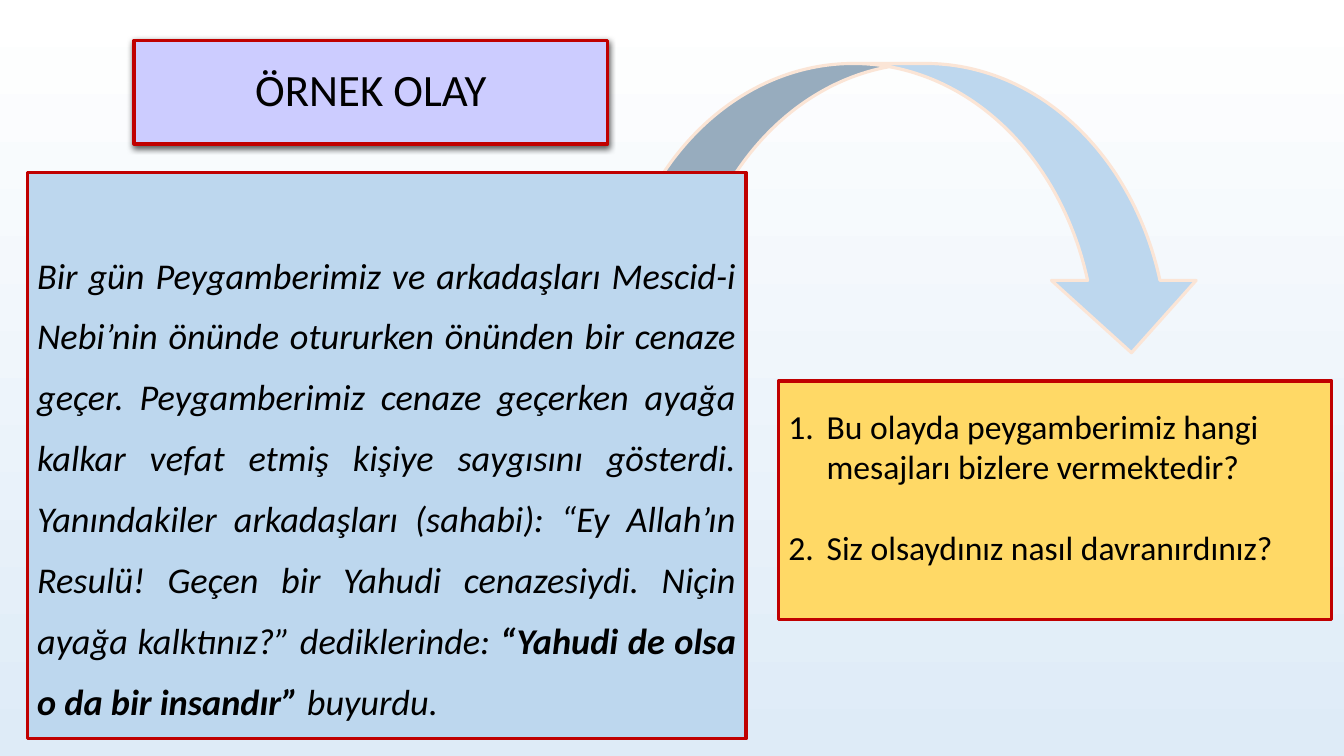
import pptx
import pptx.util
import pptx.dml.color
import pptx.enum.shapes
import pptx.enum.text
import pptx.oxml
import pptx.oxml.ns

Inches, Pt = pptx.util.Inches, pptx.util.Pt
SHAPE = pptx.enum.shapes.MSO_SHAPE
ALIGN = pptx.enum.text.PP_ALIGN
ANCHOR = pptx.enum.text.MSO_ANCHOR

FONT = "Calibri"
COLORS = {
    "text": "000000", "border": "C00000", "title": "CCCCFF", "story": "BDD7EE",
    "questions": "FFD966", "arrow_line": "FBE5D6", "sky_top": "FFFFFF", "sky_bottom": "DEEBF7",
}
TITLE = "ÖRNEK OLAY"
STORY = [  # text, bold
    ("Bir gün Peygamberimiz ve arkadaşları Mescid-i Nebi’nin önünde otururken önünden bir "
     "cenaze geçer. Peygamberimiz cenaze geçerken ayağa kalkar vefat etmiş kişiye saygısını "
     "gösterdi. Yanındakiler arkadaşları (sahabi): “Ey Allah’ın Resulü! Geçen bir Yahudi "
     "cenazesiydi. Niçin ayağa kalktınız?” dediklerinde: ", False),
    ("“Yahudi de olsa o da bir insandır” ", True),
    ("buyurdu.", False),
]
QUESTIONS = [
    "Bu olayda peygamberimiz hangi mesajları bizlere vermektedir?",
    "Siz olsaydınız nasıl davranırdınız?",
]
PLACES = {  # left, top, width, height
    "title": (1.33, 0.4, 4.7, 1.03),
    "questions": (7.72, 3.78, 5.49, 2.37),
    "arrow": (6.06, 0.63, 5.88, 2.87),
    "story": (0.27, 1.71, 7.13, 5.62),
}
NUMBER_INDENT = Inches(0.38)
SHADOW = (
    f'<a:effectLst {pptx.oxml.ns.nsdecls("a")}>'
    '<a:outerShdw blurRad="57150" dist="19050" dir="5400000" algn="ctr" rotWithShape="0">'
    '<a:srgbClr val="000000"><a:alpha val="63000"/></a:srgbClr></a:outerShdw></a:effectLst>'
)


def color(name):
    return pptx.dml.color.RGBColor.from_string(COLORS[name])


def add_panel(slide, place, fill, line="border", kind=SHAPE.RECTANGLE):
    panel = slide.shapes.add_shape(kind, *map(Inches, PLACES[place]))
    panel.shadow.inherit = False
    panel.fill.solid()
    panel.fill.fore_color.rgb = color(fill)
    panel.line.color.rgb = color(line)
    panel.line.width = Pt(2.25)
    return panel


def set_frame(panel, anchor, bottom=0.05):
    frame = panel.text_frame
    frame.word_wrap = True
    frame.vertical_anchor = anchor
    frame.margin_bottom = Inches(bottom)
    return frame


def add_span(para, text, size, bold=False, italic=False):
    span = para.add_run()
    span.text = text
    span.font.name = FONT
    span.font.size = Pt(size)
    span.font.bold = bold
    span.font.italic = italic
    span.font.color.rgb = color("text")


def number_paragraph(para):
    properties = para._p.get_or_add_pPr()
    properties.set("marL", str(NUMBER_INDENT))
    properties.set("indent", str(-NUMBER_INDENT))
    properties.append(pptx.oxml.parse_xml(
        f'<a:buAutoNum {pptx.oxml.ns.nsdecls("a")} type="arabicPeriod"/>'))


def paint_background(slide):
    fill = slide.background.fill
    fill.gradient()
    fill.gradient_angle = 270
    for stop, name in zip(fill.gradient_stops, ("sky_top", "sky_bottom")):
        stop.color.rgb = color(name)


def add_title(slide):
    panel = add_panel(slide, "title", "title")
    properties = panel._element.spPr
    properties.replace(properties.find(pptx.oxml.ns.qn("a:effectLst")),
                       pptx.oxml.parse_xml(SHADOW))
    para = set_frame(panel, ANCHOR.MIDDLE).paragraphs[0]
    para.alignment = ALIGN.CENTER
    para.line_spacing = 0.9
    add_span(para, TITLE, 32)


def add_questions(slide):
    frame = set_frame(add_panel(slide, "questions", "questions"), ANCHOR.MIDDLE, bottom=0.32)
    for index, question in enumerate(QUESTIONS):
        para = frame.add_paragraph() if index else frame.paragraphs[0]
        para.alignment = ALIGN.LEFT
        if index:
            para.space_before = Pt(29)
        number_paragraph(para)
        add_span(para, question, 24)


def add_story(slide):
    frame = set_frame(add_panel(slide, "story", "story"), ANCHOR.BOTTOM, bottom=0.16)
    para = frame.paragraphs[0]
    para.alignment = ALIGN.JUSTIFY
    para.line_spacing = 1.4
    for text, bold in STORY:
        add_span(para, text, 25.9, bold, italic=True)


def main():
    deck = pptx.Presentation()
    deck.slide_width, deck.slide_height = Inches(13.33), Inches(7.5)
    slide = deck.slides.add_slide(deck.slide_layouts[6])
    paint_background(slide)
    add_title(slide)
    add_questions(slide)
    add_panel(slide, "arrow", "story", "arrow_line", SHAPE.CURVED_DOWN_ARROW)
    add_story(slide)
    deck.save("out.pptx")


if __name__ == "__main__":
    main()
